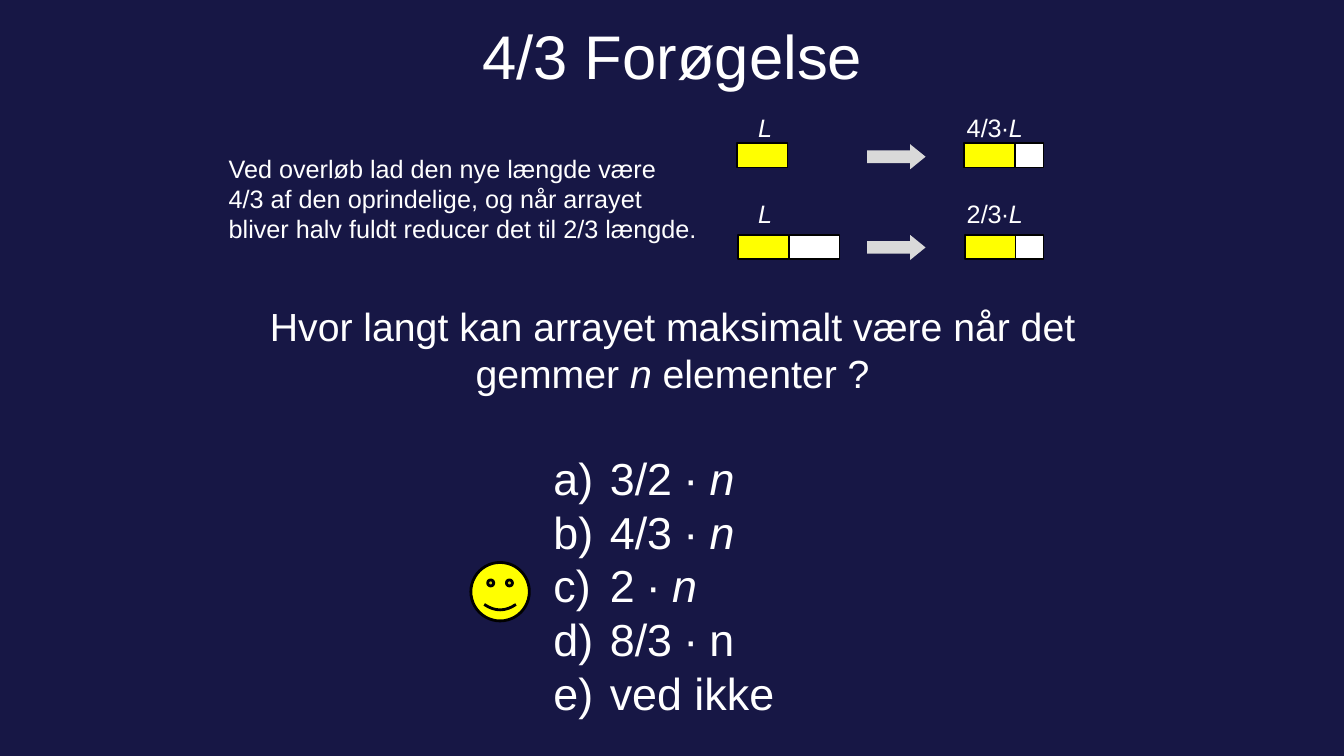
"""Quiz slide about growing and shrinking a dynamic array by factors 4/3 and 2/3."""
from lxml.etree import SubElement
from pptx import Presentation
from pptx.dml.color import RGBColor
from pptx.enum.shapes import MSO_SHAPE
from pptx.enum.text import MSO_ANCHOR, PP_ALIGN
from pptx.oxml.ns import qn
from pptx.util import Inches, Pt

COLORS = {"night": "171745", "text": "FFFFFF", "used": "FFFF00",
          "free": "FFFFFF", "arrow": "D9D9D9", "outline": "000000"}
FONT = "Arial"

TITLE = "4/3 Forøgelse"
RULE = [("Ved overløb lad den nye længde være\n"
         "4/3 af den oprindelige, og når arrayet\n"
         "bliver halv fuldt reducer det til 2/3 længde.", False)]
QUESTION = [("Hvor langt kan arrayet maksimalt være når det gemmer ", False),
            ("n ", True), ("elementer ?", False)]
ANSWERS = [
    [("3/2 ∙ ", False), ("n", True)],
    [("4/3 ∙ ", False), ("n", True)],
    [("2 ∙ ", False), ("n", True)],
    [("8/3 ∙ n", False)],
    [("ved ikke", False)],
]
RESIZES = [
    {"factor": "4/3∙", "label_top": 1.07, "top": 1.42, "arrow_top": 1.43,
     "cells": [("used", 7.31, 0.5), ("free", 10.07, 0.28), ("used", 9.56, 0.5)]},
    {"factor": "2/3∙", "label_top": 1.92, "top": 2.33, "arrow_top": 2.33,
     "cells": [("free", 7.83, 0.5), ("used", 7.32, 0.5),
               ("free", 9.85, 0.5), ("used", 9.57, 0.5)]},
]
OLD_LABEL_LEFT, NEW_LABEL_LEFT = 7.42, 9.49
CELL_HEIGHT = 0.24


def add_text(frame, runs, size, align=PP_ALIGN.LEFT, before=0, after=0, lettered=False):
    """Append one paragraph of (text, italic) runs to a text frame."""
    first = frame.paragraphs[0]
    paragraph = frame.add_paragraph() if first.runs else first
    paragraph.alignment = align
    paragraph.space_before, paragraph.space_after = Pt(before), Pt(after)
    for text, italic in runs:
        for number, line in enumerate(text.split("\n")):
            if number:
                paragraph.add_line_break()
            run = paragraph.add_run()
            run.text = line
            run.font.name, run.font.size, run.font.italic = FONT, Pt(size), italic
            run.font.color.rgb = RGBColor.from_string(COLORS["text"])
    if lettered:
        properties = paragraph._p.get_or_add_pPr()
        properties.set("marL", str(Inches(0.56)))
        properties.set("indent", str(-Inches(0.56)))
        SubElement(properties, qn("a:buFont"), typeface=FONT)
        SubElement(properties, qn("a:buAutoNum"), type="alphaLcParenR")


def add_frame(slide, left, top, width, height, wrap=True):
    """Add a text box and return its text frame."""
    frame = slide.shapes.add_textbox(*map(Inches, (left, top, width, height))).text_frame
    frame.word_wrap = wrap
    return frame


def add_figure(slide, preset, left, top, width, height, fill, line=None):
    """Add a filled preset shape with an optional outline width in points."""
    figure = slide.shapes.add_shape(preset, *map(Inches, (left, top, width, height)))
    figure.shadow.inherit = False
    figure.fill.solid()
    figure.fill.fore_color.rgb = RGBColor.from_string(COLORS[fill])
    if line:
        figure.line.color.rgb = RGBColor.from_string(COLORS["outline"])
        figure.line.width = Pt(line)
    else:
        figure.line.fill.background()
    return figure


def main():
    """Build and save the slide."""
    deck = Presentation()
    deck.slide_width, deck.slide_height = Inches(13.33), Inches(7.5)
    slide = deck.slides.add_slide(deck.slide_layouts[6])
    slide.background.fill.solid()
    slide.background.fill.fore_color.rgb = RGBColor.from_string(COLORS["night"])

    problem = add_frame(slide, 2.17, 1.47, 9, 2.7)
    add_text(problem, RULE, 18, before=3.6, after=36)
    add_text(problem, QUESTION, 28, align=PP_ALIGN.CENTER, before=5.6, after=12)

    title = add_frame(slide, 1.67, -0.08, 10, 1.25)
    title.vertical_anchor = MSO_ANCHOR.MIDDLE
    add_text(title, [(TITLE, False)], 44, align=PP_ALIGN.CENTER)

    smiley = add_figure(slide, MSO_SHAPE.SMILEY_FACE, 4.67, 5.58, 0.58, 0.58, "used", line=2)
    smiley.adjustments[0] = 0.047

    for resize in RESIZES:
        for kind, left, width in resize["cells"]:
            add_figure(slide, MSO_SHAPE.RECTANGLE, left, resize["top"], width,
                       CELL_HEIGHT, kind, line=1)
        arrow = add_figure(slide, MSO_SHAPE.RIGHT_ARROW, 8.6, resize["arrow_top"],
                           0.58, 0.25, "arrow")
        arrow.adjustments[1] = 0.615
        for left, label in ((OLD_LABEL_LEFT, [("L", True)]),
                            (NEW_LABEL_LEFT, [(resize["factor"], False), ("L", True)])):
            add_text(add_frame(slide, left, resize["label_top"], 0.8, 0.4, wrap=False),
                     label, 18)

    choices = add_frame(slide, 5.39, 4.42, 3.11, 2.83)
    for answer in ANSWERS:
        add_text(choices, answer, 32, lettered=True)

    deck.save("out.pptx")


if __name__ == "__main__":
    main()
